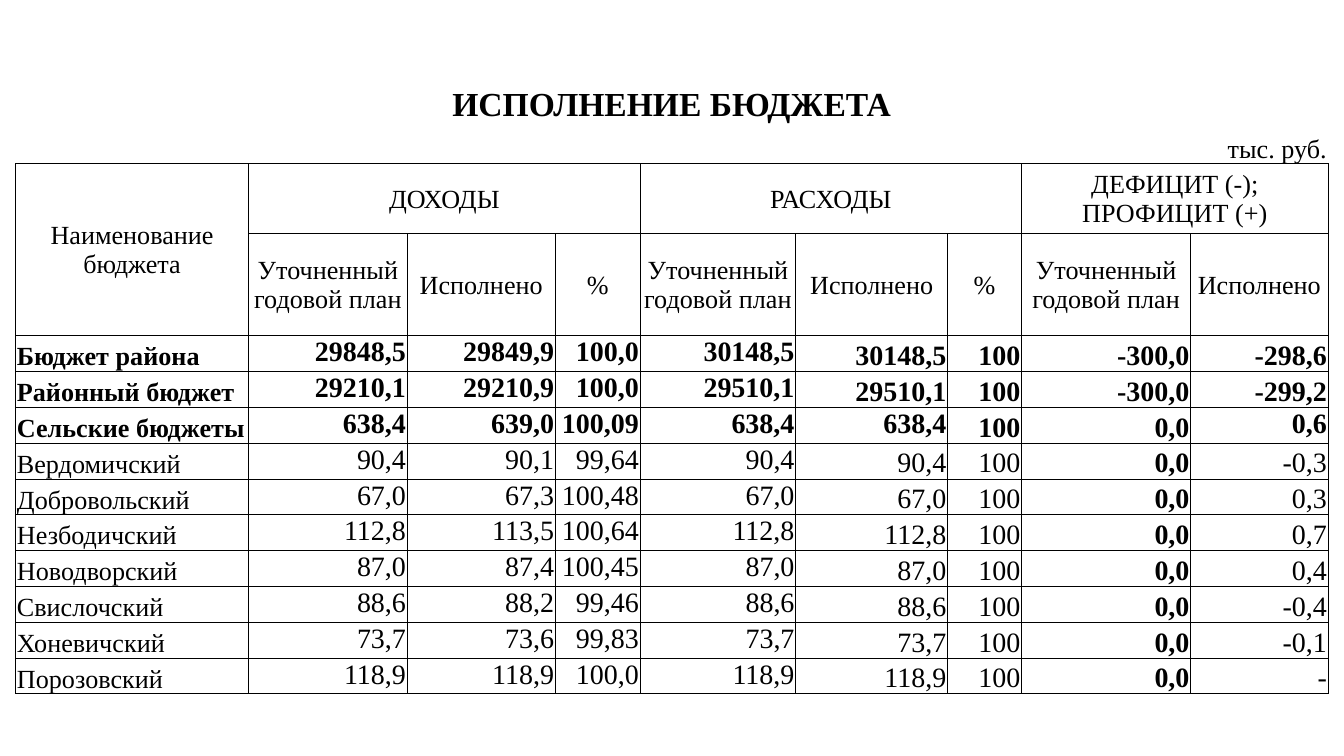
from lxml import etree
from pptx import Presentation
from pptx.dml.color import RGBColor
from pptx.enum.text import MSO_ANCHOR, PP_ALIGN
from pptx.oxml.ns import qn
from pptx.util import Pt

LEFT, MID, RIGHT = PP_ALIGN.LEFT, PP_ALIGN.CENTER, PP_ALIGN.RIGHT
TOP, CENTER, BASE = MSO_ANCHOR.TOP, MSO_ANCHOR.MIDDLE, MSO_ANCHOR.BOTTOM
FONT, INK = "Times New Roman", "000000"
PLAIN = "{2D5ABB26-0587-4C30-8999-92F81FD0307C}"  # no style, no grid


def put(cell, text, size=14, bold=False, align=MID, anchor=CENTER):
    cell.vertical_anchor = anchor
    para = cell.text_frame.paragraphs[0]
    para.alignment = align
    run = para.add_run()
    run.text = text
    run.font.name, run.font.size, run.font.bold = FONT, Pt(size), bold
    run.font.color.rgb = RGBColor.from_string(INK)


def rule(cell, sides):
    for side in sides:
        line = etree.SubElement(cell._tc.get_or_add_tcPr(), qn(f"a:ln{side}"), w=str(Pt(0.5)))
        fill = etree.SubElement(line, qn("a:solidFill"))
        etree.SubElement(fill, qn("a:srgbClr"), val=INK)


prs = Presentation()
prs.slide_width, prs.slide_height = Pt(720), Pt(405)
slide = prs.slides.add_slide(prs.slide_layouts[6])

# Empty grid
cols = [124.8, 73, 12, 52.6, 26.8, 45.4, 83.4, 64.8, 16.6, 39.6, 90.6, 8.8, 64.8]
rows = [24.5, 19.4, 37.5, 54.7] + [19.2] * 10
frame = slide.shapes.add_table(len(rows), len(cols), Pt(8.4), Pt(43.8),
                               Pt(sum(cols)), Pt(sum(rows)))
table = frame.table
table.first_row = table.horz_banding = False
table._tbl.tblPr.find(qn("a:tableStyleId")).text = PLAIN
for col, width in zip(table.columns, cols):
    col.width = Pt(width)
for row, high in zip(table.rows, rows):
    row.height = Pt(high)

# Margins, borders and fill; the two heading rows have no grid
for r in range(len(rows)):
    for c in range(len(cols)):
        cell = table.cell(r, c)
        cell.margin_left = cell.margin_right = cell.margin_top = Pt(0.7)
        cell.margin_bottom = 0
        rule(cell, "" if r == 0 else "B" if r == 1 else "LRTB")
        cell.fill.background()
        # Keeps blank cells from stretching their row
        end = cell.text_frame.paragraphs[0]._p.get_or_add_endParaRPr()
        end.set("sz", "1400")

# Title, unit and group heads: row, column, rows down, columns across
table.cell(0, 0).merge(table.cell(0, 12))
put(table.cell(0, 0), "ИСПОЛНЕНИЕ БЮДЖЕТА", size=18, bold=True)
for c in (2, 4, 8, 10):
    table.cell(1, c).merge(table.cell(1, c + 1))
put(table.cell(1, 12), "тыс. руб.", align=RIGHT, anchor=BASE)
heads = [
    (0, 2, 1, "Наименование бюджета"),
    (1, 1, 5, "ДОХОДЫ"),
    (6, 1, 4, "РАСХОДЫ"),
    (10, 1, 3, "ДЕФИЦИТ (-); ПРОФИЦИТ (+)"),
]
for c, down, wide, text in heads:
    table.cell(2, c).merge(table.cell(1 + down, c + wide - 1))
    put(table.cell(2, c), text)

# Column heads; each field starts at one of these columns
starts = [0, 1, 3, 5, 6, 7, 9, 10, 11]
pairs = (1, 3, 7, 11)
for r in range(3, len(rows)):
    for c in pairs:
        table.cell(r, c).merge(table.cell(r, c + 1))
plan, done = "Уточненный годовой план", "Исполнено"
for c, text in zip(starts[1:], [plan, done, "%", plan, done, "%", plan, done]):
    put(table.cell(3, c), text)

# Budgets: name, income plan, done, %, spending plan, done, %, balance plan, done
data = [
    ("Бюджет района", "29848,5", "29849,9", "100,0", "30148,5", "30148,5", "100", "-300,0", "-298,6"),
    ("Районный бюджет", "29210,1", "29210,9", "100,0", "29510,1", "29510,1", "100", "-300,0", "-299,2"),
    ("Сельские бюджеты", "638,4", "639,0", "100,09", "638,4", "638,4", "100", "0,0", "0,6"),
    ("Вердомичский", "90,4", "90,1", "99,64", "90,4", "90,4", "100", "0,0", "-0,3"),
    ("Добровольский", "67,0", "67,3", "100,48", "67,0", "67,0", "100", "0,0", "0,3"),
    ("Незбодичский", "112,8", "113,5", "100,64", "112,8", "112,8", "100", "0,0", "0,7"),
    ("Новодворский", "87,0", "87,4", "100,45", "87,0", "87,0", "100", "0,0", "0,4"),
    ("Свислочский", "88,6", "88,2", "99,46", "88,6", "88,6", "100", "0,0", "-0,4"),
    ("Хоневичский", "73,7", "73,6", "99,83", "73,7", "73,7", "100", "0,0", "-0,1"),
    ("Порозовский", "118,9", "118,9", "100,0", "118,9", "118,9", "100", "0,0", "-"),
]
for i, items in enumerate(data):
    high = (1, 3, 5, 6, 7, 11) if i == 2 else (1, 3, 5, 6)
    for c, text in zip(starts, items):
        put(table.cell(4 + i, c), text, size=15 if c else 14, bold=i < 3 or c == 10,
            align=RIGHT if c else LEFT, anchor=TOP if c in high else BASE)

prs.save("out.pptx")
